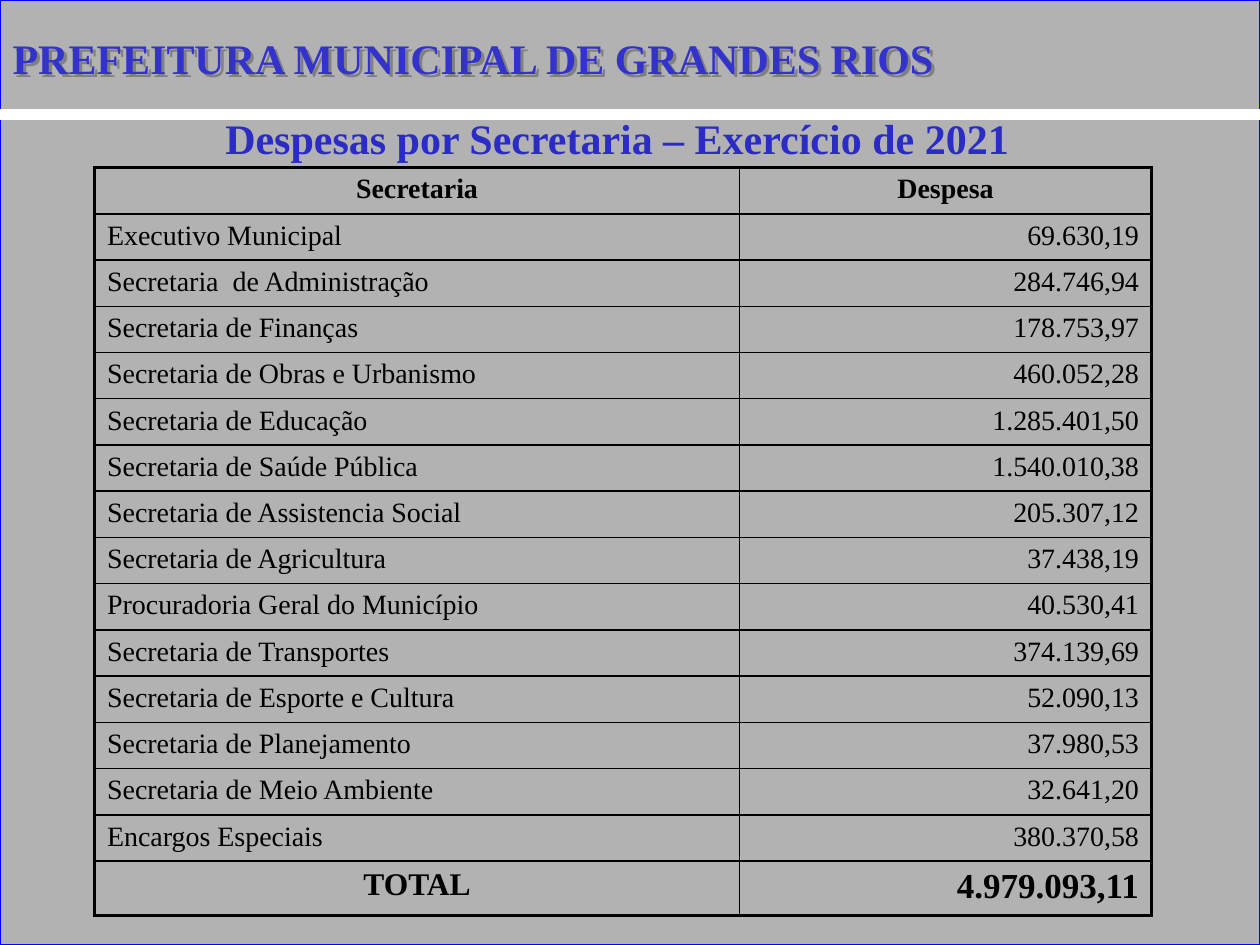
from lxml.etree import SubElement
from pptx import Presentation
from pptx.dml.color import RGBColor
from pptx.enum.shapes import MSO_CONNECTOR, MSO_SHAPE
from pptx.enum.text import MSO_ANCHOR, MSO_AUTO_SIZE, PP_ALIGN
from pptx.oxml.ns import qn
from pptx.util import Inches, Pt

FONT = "Times New Roman"
BLACK = "000000"
THIN, THICK = 1, 2.25
EXPENSES = [
    ("Executivo Municipal", "69.630,19"),
    ("Secretaria  de Administração", "284.746,94"),
    ("Secretaria de Finanças", "178.753,97"),
    ("Secretaria de Obras e Urbanismo", "460.052,28"),
    ("Secretaria de Educação", "1.285.401,50"),
    ("Secretaria de Saúde Pública", "1.540.010,38"),
    ("Secretaria de Assistencia Social", "205.307,12"),
    ("Secretaria de Agricultura", "37.438,19"),
    ("Procuradoria Geral do Município", "40.530,41"),
    ("Secretaria de Transportes", "374.139,69"),
    ("Secretaria de Esporte e Cultura", "52.090,13"),
    ("Secretaria de Planejamento", "37.980,53"),
    ("Secretaria de Meio Ambiente", "32.641,20"),
    ("Encargos Especiais", "380.370,58"),
]


def color(value):
    return RGBColor.from_string(value)


def write(frame, text, size, ink, bold, align, space_percent):
    """Fill a text frame with one paragraph; space before is a percentage of the line."""
    paragraph = frame.paragraphs[0]
    paragraph.text = text
    paragraph.alignment = align
    font = paragraph.font
    font.name, font.size, font.bold = FONT, Pt(size), bold
    font.color.rgb = color(ink)
    properties = paragraph._p.get_or_add_pPr()
    space = properties.makeelement(qn("a:spcBef"))
    SubElement(space, qn("a:spcPct"), val=str(space_percent * 1000))
    properties.insert(0, space)


def add_background(page, width, height):
    panel = page.shapes.add_shape(MSO_SHAPE.RECTANGLE, 0, 0, width, height)
    panel.shadow.inherit = False
    panel.fill.solid()
    panel.fill.fore_color.rgb = color("B2B2B2")
    panel.line.color.rgb = color("0000FF")
    panel.line.width = Pt(0.75)


def add_divider(page, width):
    top = Inches(0.91)
    line = page.shapes.add_connector(MSO_CONNECTOR.STRAIGHT, 0, top, width, top)
    line.line.color.rgb = color("FFFFFF")
    line.line.width = Pt(6)
    SubElement(line.element.spPr, qn("a:effectLst"))


def format_heading(box, left, top, width, text, ink, align):
    box.left, box.top = Inches(left), Inches(top)
    box.width, box.height = Inches(width), Inches(0.5)
    frame = box.text_frame
    frame.word_wrap = True
    frame.auto_size = MSO_AUTO_SIZE.SHAPE_TO_FIT_TEXT
    frame.vertical_anchor = MSO_ANCHOR.TOP
    write(frame, text, 24, ink, True, align, 50)


def add_text_shadow(box):
    """Shadow of a box without fill, which falls from its text."""
    box.fill.background()
    effects = SubElement(box.element.spPr, qn("a:effectLst"))
    shadow = SubElement(effects, qn("a:outerShdw"), dist=str(Pt(2.5)),
                        dir="2700000", algn="ctr", rotWithShape="0")
    SubElement(shadow, qn("a:srgbClr"), val="808080")


def set_borders(cell, widths):
    """Draw the left, right, top and bottom borders with widths in points."""
    properties = cell._tc.get_or_add_tcPr()
    for index, (side, width) in enumerate(zip("LRTB", widths)):
        line = properties.makeelement(qn(f"a:ln{side}"), w=str(Pt(width)))
        fill = SubElement(line, qn("a:solidFill"))
        SubElement(fill, qn("a:srgbClr"), val=BLACK)
        properties.insert(index, line)


def add_expense_table(page):
    rows = [("Secretaria", "Despesa"), *EXPENSES, ("TOTAL", "4.979.093,11")]
    last = len(rows) - 1
    table = page.shapes.add_table(len(rows), 2, Inches(0.75), Inches(1.33),
                                  Inches(8.39), Inches(5.93)).table
    table.first_row = table.horz_banding = False
    for column, width in zip(table.columns, (5.12, 3.27)):
        column.width = Inches(width)
    for r, texts in enumerate(rows):
        table.rows[r].height = Inches(0.43) if r == last else Inches(5.5 / last)
        sizes = (18, 20) if r == last else (16, 16)
        for c, text in enumerate(texts):
            cell = table.cell(r, c)
            if r == 0 or (r == last and c == 0):
                align = PP_ALIGN.CENTER
            else:
                align = PP_ALIGN.RIGHT if c else PP_ALIGN.LEFT
            write(cell.text_frame, text, sizes[c], BLACK, r in (0, last), align, 20)
            cell.fill.background()
            outer = (c == 0, c == 1, r == 0, r == last)
            set_borders(cell, [THICK if edge else THIN for edge in outer])


def main():
    deck = Presentation()
    deck.slide_width, deck.slide_height = Inches(10), Inches(7.5)
    page = deck.slides.add_slide(deck.slide_layouts[5])
    add_background(page, deck.slide_width, deck.slide_height)
    subtitle = page.shapes.add_textbox(0, 0, 0, 0)
    format_heading(subtitle, 0.23, 0.84, 9.42,
                   "Despesas por Secretaria – Exercício de 2021 ",
                   "2B2BC5", PP_ALIGN.CENTER)
    add_divider(page, deck.slide_width)
    title = page.shapes.title
    title.element.getparent().append(title.element)
    format_heading(title, 0, 0.21, 9.49, "PREFEITURA MUNICIPAL DE GRANDES RIOS",
                   "3333CC", PP_ALIGN.LEFT)
    add_text_shadow(title)
    add_expense_table(page)
    deck.save("out.pptx")


if __name__ == "__main__":
    main()
